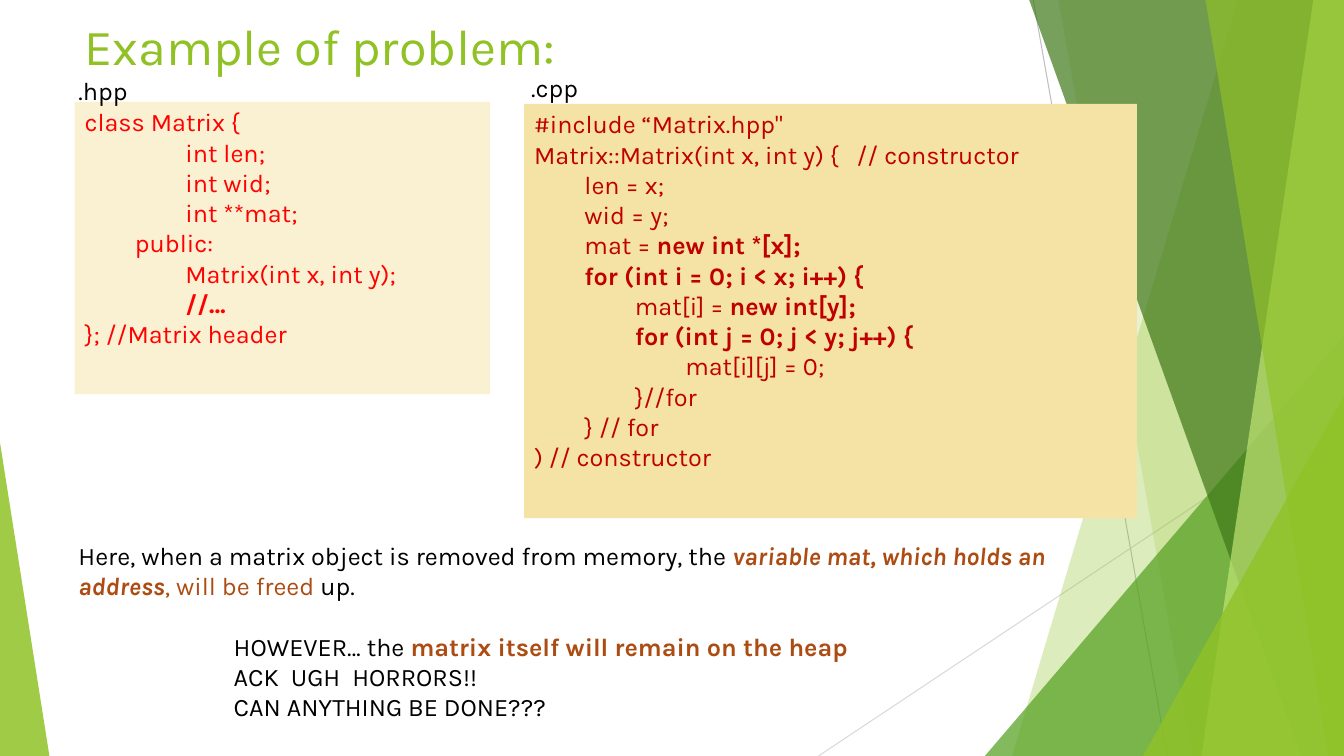
from lxml import etree
from pptx import Presentation
from pptx import util as u
from pptx.dml.color import RGBColor
from pptx.enum import shapes, text
from pptx.oxml.ns import qn

COLORS = {
    "lime": "90C226", "green": "54A021", "forest": "3F7819", "pale": "C0E474",
    "cream": "FAF1D2", "sand": "F5E3A5", "red": "FF0000", "crimson": "C00000",
    "rust": "AD4C12", "black": "000000", "gray": "BFBFBF", "silver": "D9D9D9",
}


class Deck:
    """Slide builder: places are percentages of the slide, text is Karla."""

    font, size, tab = "Karla", 18, 0.5

    def __init__(self, width, height):
        self.prs = Presentation()
        self.prs.slide_width, self.prs.slide_height = u.Inches(width), u.Inches(height)
        self.s = self.prs.slides.add_slide(self.prs.slide_layouts[6])

    def color(self, name):
        return RGBColor.from_string(COLORS[name])

    def place(self, *values):
        sides = (self.prs.slide_width, self.prs.slide_height)
        return [round(v / 100 * sides[i % 2]) for i, v in enumerate(values)]

    def paint(self, sp, color, alpha=100):
        sp.shadow.inherit = False
        sp.line.fill.background()
        sp.fill.solid()
        sp.fill.fore_color.rgb = self.color(color)
        if alpha < 100:
            clr = sp.fill._xPr.find(".//" + qn("a:srgbClr"))
            etree.SubElement(clr, qn("a:alpha"), val=str(alpha * 1000))

    def line(self, ends, color):
        cx = self.s.shapes.add_connector(shapes.MSO_CONNECTOR.STRAIGHT, *self.place(*ends))
        cx.line.color.rgb = self.color(color)
        cx.line.width = u.Pt(0.75)
        etree.SubElement(cx._element.spPr, qn("a:effectLst"))

    def band(self, top, bottom, color, alpha):
        pts = [self.place(*pt) for pt in ((top, 0), (100, 0), (100, 100), (bottom, 100))]
        fb = self.s.shapes.build_freeform(*pts[0])
        fb.add_line_segments(pts[1:], close=True)
        self.paint(fb.convert_to_shape(), color, alpha)

    def wedge(self, left, top, width, peak, color, alpha):
        sp = self.s.shapes.add_shape(shapes.MSO_SHAPE.ISOSCELES_TRIANGLE,
                                     *self.place(left, top, width, 100 - top))
        sp.adjustments[0] = peak
        self.paint(sp, color, alpha)

    def text(self, box, lines, color="black", size=None, wrap=True,
             anchor=text.MSO_ANCHOR.TOP, fill=None):
        sp = self.s.shapes.add_textbox(*self.place(*box))
        if fill:
            self.paint(sp, fill)
        tf = sp.text_frame
        tf.word_wrap, tf.vertical_anchor = wrap, anchor
        for i, line in enumerate(lines):
            p = tf.paragraphs[0] if i == 0 else tf.add_paragraph()
            runs = [(line, {})] if isinstance(line, str) else line
            self.tabs(p, runs[0][0].count("\t"))
            p.font.name, p.font.size = self.font, u.Pt(size or self.size)
            p.font.color.rgb = self.color(color)
            for words, style in runs:
                r = p.add_run()
                r.text = words
                for key, value in style.items():
                    if key == "color":
                        r.font.color.rgb = self.color(value)
                    else:
                        setattr(r.font, key, value)
        return tf

    def tabs(self, p, count):
        if count:
            stops = etree.SubElement(p._p.get_or_add_pPr(), qn("a:tabLst"))
            for n in range(1, count + 1):
                etree.SubElement(stops, qn("a:tab"), pos=str(u.Inches(n * self.tab)), algn="l")

    def indent(self, paragraphs, inches):
        for p in paragraphs:
            p._p.get_or_add_pPr().set("marL", str(u.Inches(inches)))


def main():
    d = Deck(13.333, 7.5)
    bold = {"bold": True}
    accent = {"color": "rust"}
    strong = {**accent, **bold}

    d.line((76.88, 0, 86.85, 100), "gray")
    d.line((100, 53.73, 60.9, 100), "silver")
    d.band(92.1, 75.3, "lime", 30)
    d.band(78.75, 88.72, "lime", 20)
    d.wedge(73.28, 44.4, 26.72, 1, "green", 72)
    d.band(76.58, 96.82, "forest", 70)
    d.band(97.72, 89.4, "pale", 70)
    d.band(89.7, 98.85, "lime", 65)
    d.wedge(85.05, 52.4, 14.95, 1, "lime", 80)
    d.wedge(0, 58.53, 3.68, 0, "lime", 85)

    d.text((5.55, 0.4, 70.5, 11.07), ["Example of problem:"], "lime", 36,
           anchor=text.MSO_ANCHOR.MIDDLE)

    header = [
        "class Matrix {",
        "\t\tint len;",
        "\t\tint wid;",
        "\t\tint **mat;",
        "\tpublic:",
        "\t\tMatrix(int x, int y);",
        [("\t\t//…", bold)],
        "}; //Matrix header",
    ]
    d.text((5.55, 13.47, 30.9, 38.67), header, "red", fill="cream")

    source = [
        "#include “Matrix.hpp\"",
        "Matrix::Matrix(int x, int y) {   // constructor",
        "\tlen = x;",
        "\twid = y;",
        [("\tmat = ", {}), ("new int *[x];", bold)],
        [("\tfor (int i = 0; i < x; i++) {", bold)],
        [("\t\tmat[i] = ", {}), ("new int[y];", bold)],
        [("\t\tfor (int j = 0; j < y; j++) {", bold)],
        "\t\t\tmat[i][j] = 0;",
        "\t\t}//for",
        "\t} // for",
        ") // constructor",
    ]
    d.text((39, 13.73, 45.6, 54.8), source, "crimson", fill="sand")

    for left, top, name in ((5.1, 9.33, ".hpp"), (38.78, 8.93, ".cpp")):
        d.text((left, top, 5.3, 5.33), [name], wrap=False)

    tf = d.text((5.1, 70.8, 76.5, 25.6), [
        [("Here, when a matrix object is removed from memory, the ", {}),
         ("variable mat, which holds an address", {**strong, "italic": True}),
         (", will be freed ", accent), ("up.", {})],
        [("HOWEVER… the ", {}), ("matrix itself will remain on the heap", strong)],
        "ACK  UGH  HORRORS!!",
        "CAN ANYTHING BE DONE???",
    ])
    d.indent(tf.paragraphs[1:], 1.54)
    tf.paragraphs[1].space_before = u.Pt(21.6)

    d.prs.save("out.pptx")


if __name__ == "__main__":
    main()
